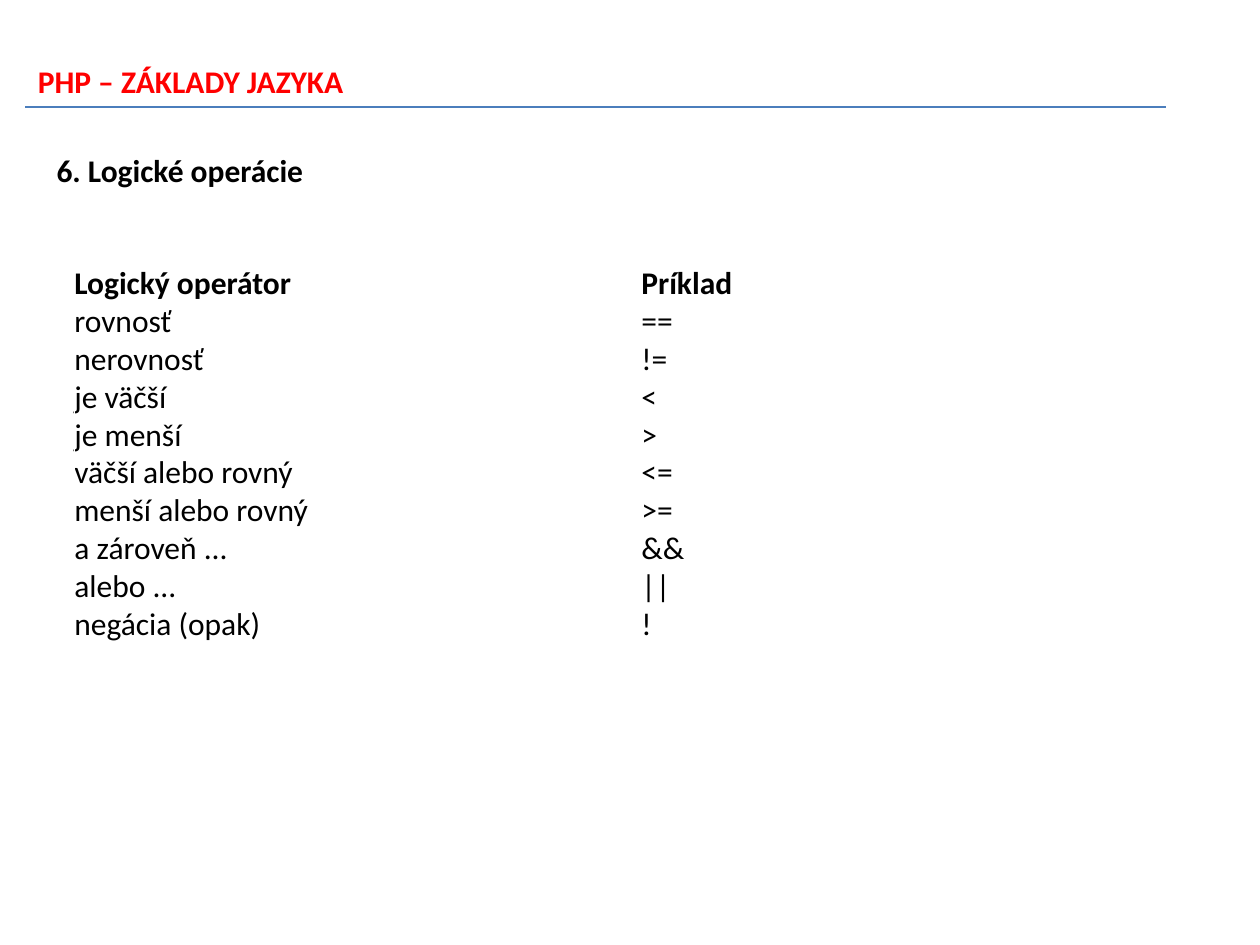
from typing import NamedTuple

from pptx import Presentation
from pptx.dml.color import RGBColor
from pptx.enum.shapes import MSO_CONNECTOR
from pptx.enum.text import MSO_ANCHOR, MSO_AUTO_SIZE, PP_ALIGN
from pptx.oxml.ns import qn
from pptx.slide import Slide
from pptx.text.text import TextFrame
from pptx.util import Inches, Pt
from lxml.etree import SubElement

COLORS = {"title": "FF0000", "text": "000000", "rule": "4B7EBC"}
FONT = "Calibri"
TEXT_SIZE = Pt(18)
COLUMN_WIDTH = Inches(4.5)
ROW_HEIGHT = Inches(0.3)


class Operator(NamedTuple):
    name: str
    example: str


HEADER = Operator("Logický operátor", "Príklad")
OPERATORS = [
    Operator("rovnosť", "=="),
    Operator("nerovnosť", "!="),
    Operator("je väčší", "<"),
    Operator("je menší", ">"),
    Operator("väčší alebo rovný", "<="),
    Operator("menší alebo rovný", ">="),
    Operator("a zároveň ...", "&&"),
    Operator("alebo ...", "||"),
    Operator("negácia (opak)", "!"),
]
CLOSING_ROW = Operator("", "")


def write(frame: TextFrame, text: str, bold: bool, color: str = "text") -> None:
    para = frame.paragraphs[0]
    para.alignment = PP_ALIGN.LEFT
    para.font.size = TEXT_SIZE
    if not text:
        return
    span = para.add_run()
    span.text = text
    span.font.name = FONT
    span.font.size = TEXT_SIZE
    span.font.bold = bold
    span.font.color.rgb = RGBColor.from_string(COLORS[color])


def add_title(page: Slide, text: str) -> None:
    title = page.shapes.title
    title.left, title.top = Inches(0.2), Inches(0.44)
    title.width, title.height = Inches(9.06), Inches(0.4)
    title.text_frame.vertical_anchor = MSO_ANCHOR.TOP
    title.text_frame.auto_size = MSO_AUTO_SIZE.SHAPE_TO_FIT_TEXT
    write(title.text_frame, text, bold=True, color="title")


def add_rule(page: Slide) -> None:
    height = Inches(0.85)
    rule = page.shapes.add_connector(
        MSO_CONNECTOR.STRAIGHT, Inches(0.2), height, Inches(9.25), height
    )
    rule.line.color.rgb = RGBColor.from_string(COLORS["rule"])
    rule.line.width = Pt(0.75)
    SubElement(rule.element.spPr, qn("a:effectLst"))


def add_subtitle(page: Slide, text: str) -> None:
    box = page.shapes.add_textbox(
        Inches(0.35), Inches(1.15), Inches(2.18), Inches(1.01)
    )
    box.text_frame.word_wrap = False
    write(box.text_frame, text, bold=True)


def add_operator_table(page: Slide, rows: list[Operator]) -> None:
    columns = len(Operator._fields)
    table = page.shapes.add_table(
        len(rows), columns, Inches(0.59), Inches(2.1),
        COLUMN_WIDTH * columns, ROW_HEIGHT * len(rows),
    ).table
    table.first_row = table.horz_banding = False
    for row_index, operator in enumerate(rows):
        for column_index, text in enumerate(operator):
            cell = table.cell(row_index, column_index)
            cell.fill.background()
            cell.margin_left = cell.margin_right = 0
            cell.margin_top = cell.margin_bottom = 0
            cell.vertical_anchor = MSO_ANCHOR.MIDDLE
            write(cell.text_frame, text, bold=operator is HEADER)


def main() -> None:
    deck = Presentation()
    deck.slide_width, deck.slide_height = Inches(10), Inches(7.5)
    page = deck.slides.add_slide(deck.slide_layouts.get_by_name("Title Only"))

    # Heading
    add_title(page, "PHP – ZÁKLADY JAZYKA")
    add_rule(page)
    add_subtitle(page, "6. Logické operácie")

    # Operators and their notation
    add_operator_table(page, [HEADER, *OPERATORS, CLOSING_ROW])

    deck.save("out.pptx")


if __name__ == "__main__":
    main()
